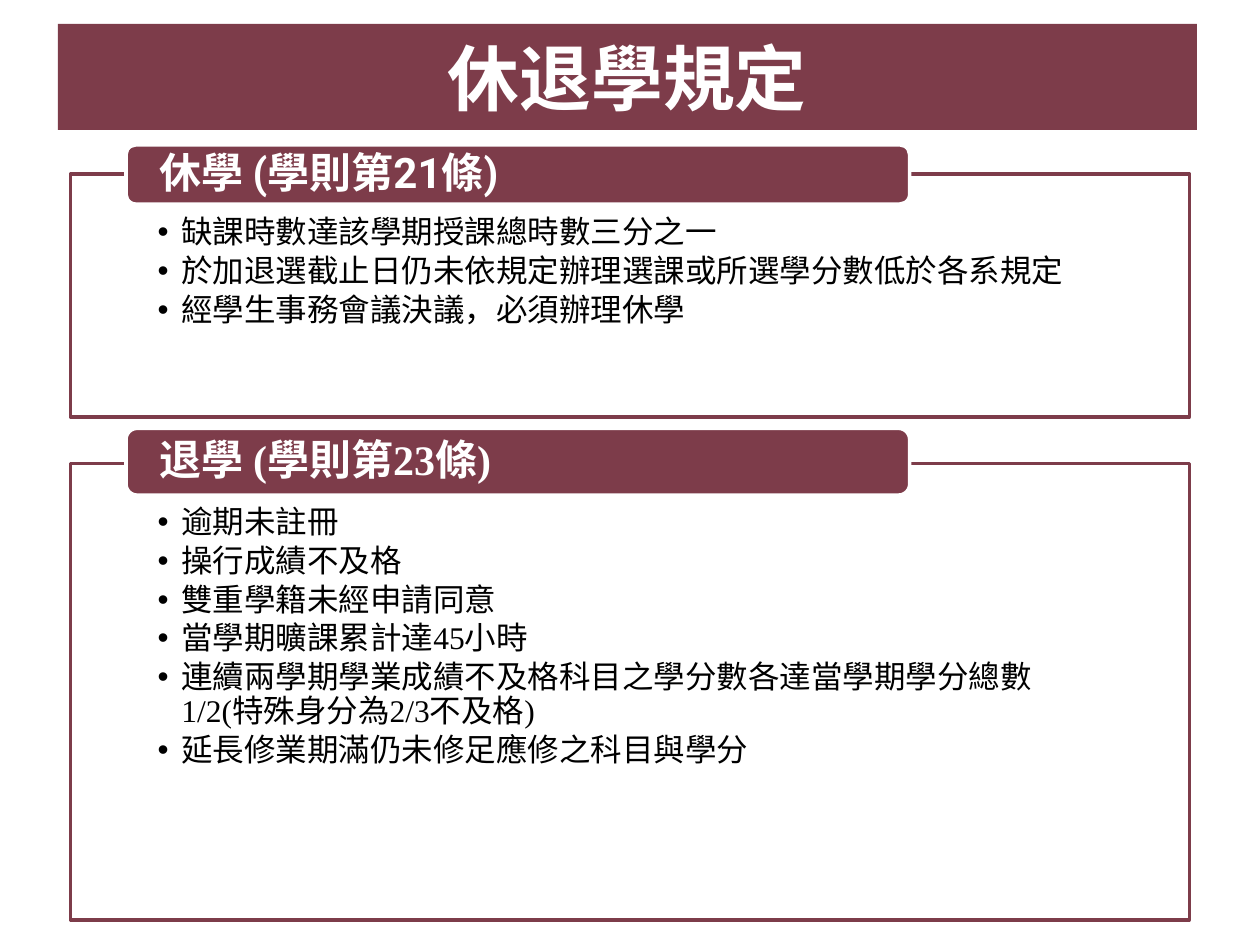
import pptx
import pptx.util
import pptx.dml.color
import pptx.enum.shapes
import pptx.enum.text
import pptx.oxml
import pptx.oxml.ns

Inches = pptx.util.Inches
Pt = pptx.util.Pt
Anchor = pptx.enum.text.MSO_ANCHOR
Align = pptx.enum.text.PP_ALIGN
COLORS = {"wine": "7D3C4A", "white": "FFFFFF", "black": "000000"}


def rgb(name):
    return pptx.dml.color.RGBColor.from_string(COLORS[name])


def style(shape, box, fill, line, pad, anchor):
    shape.left, shape.top, shape.width, shape.height = map(Inches, box)
    shape.fill.solid()
    shape.fill.fore_color.rgb = rgb(fill)
    if line:
        shape.line.color.rgb = rgb(line)
        shape.line.width = Pt(2)
    frame = shape.text_frame
    frame.word_wrap = True
    frame.auto_size = pptx.enum.text.MSO_AUTO_SIZE.NONE
    frame.vertical_anchor = anchor
    (frame.margin_left, frame.margin_top,
     frame.margin_right, frame.margin_bottom) = map(Inches, pad)
    return frame


deck = pptx.Presentation()
deck.slide_width, deck.slide_height = Inches(10), Inches(7.5)
slide = deck.slides.add_slide(deck.slide_layouts[3])

frame = style(slide.shapes.title, (0.46, 0.19, 9.04, 0.84), "wine", None,
              (0.05, 0.05, 0.05, 0.05), Anchor.MIDDLE)
frame.text = "休退學規定"
para = frame.paragraphs[0]
para.alignment = Align.CENTER
para.font.name = "Noto Sans Mono"
para.font.size = Pt(41)
para.font.bold = True
para.font.color.rgb = rgb("white")

parts = [
    ("休學 (學則第21條)", "Roboto", 1.15, 0.47, 1.38, 1.93, [
        "缺課時數達該學期授課總時數三分之一",
        "於加退選截止日仍未依規定辦理選課或所選學分數低於各系規定",
        "經學生事務會議決議，必須辦理休學",
    ]),
    ("退學 (學則第23條)", "Times New Roman", 3.4, 0.53, 3.68, 3.62, [
        "逾期未註冊",
        "操行成績不及格",
        "雙重學籍未經申請同意",
        "當學期曠課累計達45小時",
        "連續兩學期學業成績不及格科目之學分數各達當學期學分總數1/2(特殊身分為2/3不及格)",
        "延長修業期滿仍未修足應修之科目與學分",
    ]),
]

for slot, (head, font, tab_top, tab_high, top, high, rules) in enumerate(parts, 1):
    body = slide.placeholders[slot]
    frame = style(body, (0.56, top, 8.88, high), "white", "wine",
                  (0.69, 0.34, 0.69, 0.14), Anchor.TOP)
    frame.text = "\n".join(rules)
    for para in frame.paragraphs:
        props = para._p.get_or_add_pPr()
        props.set("marL", str(Inches(0.19)))
        props.set("indent", str(-Inches(0.19)))
        bullet = pptx.oxml.parse_xml(
            f'<a:buChar {pptx.oxml.ns.nsdecls("a")} char="•"/>')
        props.append(bullet)
        para.line_spacing = 0.9
        para.space_before = Pt(0)
        para.space_after = Pt(2.7)
        para.font.name = font
        para.font.size = Pt(18)
        para.font.color.rgb = rgb("black")

    tab = slide.shapes.add_shape(
        pptx.enum.shapes.MSO_SHAPE.ROUNDED_RECTANGLE, 0, 0, 0, 0)
    tab.shadow.inherit = False
    frame = style(tab, (1, tab_top, 6.22, tab_high), "wine", "white",
                  (0.24, 0, 0.24, 0), Anchor.MIDDLE)
    frame.text = head
    para = frame.paragraphs[0]
    para.alignment = Align.LEFT
    para.line_spacing = 0.9
    para.font.name = font
    para.font.size = Pt(24)
    para.font.bold = True
    para.font.color.rgb = rgb("white")

deck.save("out.pptx")
